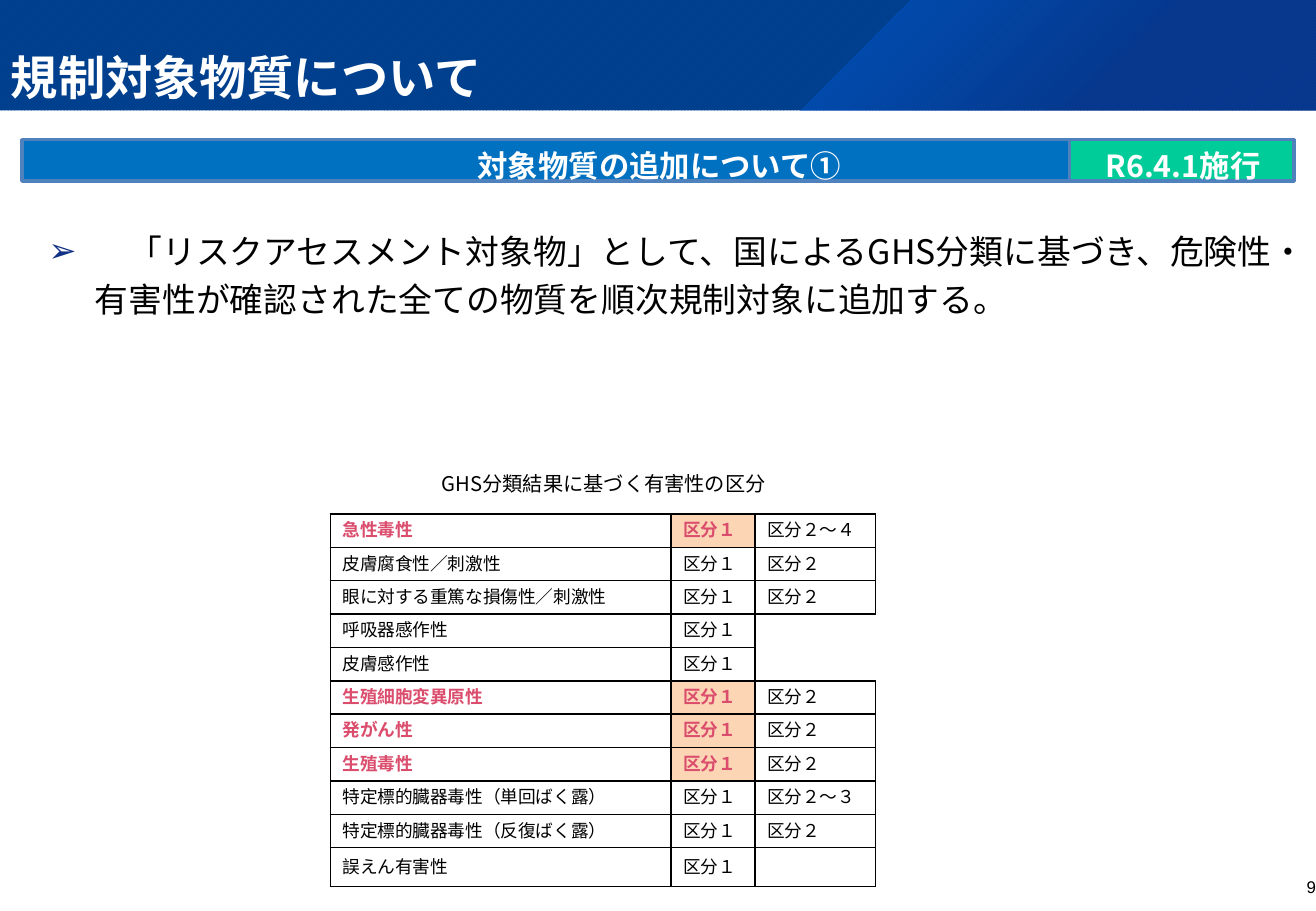
from pptx import Presentation
from pptx.dml.color import RGBColor
from pptx.enum.dml import MSO_PATTERN
from pptx.enum.shapes import MSO_SHAPE
from pptx.enum.text import MSO_ANCHOR, PP_ALIGN
from pptx.oxml import parse_xml
from pptx.oxml.ns import nsdecls, qn
from pptx.util import Pt
from lxml.etree import SubElement

GOTHIC = "Noto Sans CJK JP"
BLACK, WHITE, ROSE, PEACH = "000000", "FFFFFF", "DB4D6D", "FCD5B5"
HAZARDS = [
    ("急性毒性", "区分２～４", True),
    ("皮膚腐食性／刺激性", "区分２", False),
    ("眼に対する重篤な損傷性／刺激性", "区分２", False),
    ("呼吸器感作性", "", False),
    ("皮膚感作性", "", False),
    ("生殖細胞変異原性", "区分２", True),
    ("発がん性", "区分２", True),
    ("生殖毒性", "区分２", True),
    ("特定標的臓器毒性（単回ばく露）", "区分２～３", False),
    ("特定標的臓器毒性（反復ばく露）", "区分２", False),
    ("誤えん有害性", "", False),
]
OPEN_EDGES = {3: "LT", 4: "LB"}


def color(value):
    return RGBColor.from_string(value)


def add_run(p, text, size, rgb, bold=False, font=GOTHIC):
    r = p.add_run()
    r.text = text
    r.font.size = Pt(size)
    r.font.bold = bold
    r.font.name = font
    r.font.color.rgb = color(rgb)
    SubElement(r._r.get_or_add_rPr(), qn("a:ea")).set("typeface", font)


def set_frame(tf, anchor, insets):
    tf.word_wrap = True
    tf.vertical_anchor = anchor
    tf.margin_left, tf.margin_top, tf.margin_right, tf.margin_bottom = map(Pt, insets)


def add_text(s, box, text, size, rgb, align=PP_ALIGN.LEFT, anchor=MSO_ANCHOR.TOP,
             insets=(7.2, 3.6, 7.2, 3.6), bold=False, font=GOTHIC):
    tf = s.shapes.add_textbox(*map(Pt, box)).text_frame
    set_frame(tf, anchor, insets)
    p = tf.paragraphs[0]
    p.alignment = align
    add_run(p, text, size, rgb, bold, font)
    return p


def add_header(s):
    sp = s.shapes.add_shape(MSO_SHAPE.RECTANGLE, 0, 0, Pt(780), Pt(65.5))
    sp.shadow.inherit = False
    sp.fill.patterned()
    sp.fill.pattern = MSO_PATTERN.DARK_UPWARD_DIAGONAL
    sp.fill.fore_color.rgb = color("003579")
    sp.fill.back_color.rgb = color("004292")
    sp.line.fill.background()

    builder = s.shapes.build_freeform(Pt(539.3), Pt(0.5))
    corners = [(780, 0), (780, 65.5), (473.8, 65.5)]
    builder.add_line_segments([(Pt(x), Pt(y)) for x, y in corners])
    sp = builder.convert_to_shape()
    sp.shadow.inherit = False
    sp.line.fill.background()
    sp.fill.background()
    old = sp._element.spPr.find(qn("a:noFill"))
    stops = "".join(
        f'<a:gs pos="{pos}000"><a:srgbClr val="{rgb}"><a:alpha val="{alpha}000"/></a:srgbClr></a:gs>'
        for pos, rgb, alpha in [(0, "0064DF", 50), (62, "0C338E", 55)])
    old.getparent().replace(old, parse_xml(
        f'<a:gradFill {nsdecls("a")}><a:gsLst>{stops}</a:gsLst><a:path path="circle">'
        '<a:fillToRect r="100000" b="100000"/></a:path></a:gradFill>'))
    add_text(s, (0, 0, 780, 65.5), "規制対象物質について", 28, WHITE,
             anchor=MSO_ANCHOR.BOTTOM, insets=(6.5, 3.6, 6.5, 3.6), bold=True)


def add_band(s, left, width, text, fill):
    sp = s.shapes.add_shape(MSO_SHAPE.RECTANGLE, Pt(left), Pt(82.8), Pt(width), Pt(24.6))
    sp.shadow.inherit = False
    sp.fill.solid()
    sp.fill.fore_color.rgb = color(fill)
    sp.line.color.rgb = color("4F81BD")
    sp.line.width = Pt(2)
    set_frame(sp.text_frame, MSO_ANCHOR.MIDDLE, (8.6, 5.8, 7.2, 0))
    p = sp.text_frame.paragraphs[0]
    p.alignment = PP_ALIGN.CENTER
    add_run(p, text, 18, WHITE, True)


def add_bullet(p):
    pPr = p._p.get_or_add_pPr()
    pPr.set("marL", str(Pt(27.4)))
    pPr.set("indent", str(-Pt(27.4)))
    p.line_spacing = 1.2
    p.space_after = Pt(7)
    bu_clr = SubElement(pPr, qn("a:buClr"))
    SubElement(bu_clr, qn("a:srgbClr")).set("val", "103185")
    SubElement(pPr, qn("a:buFont")).set("typeface", "Arial")
    SubElement(pPr, qn("a:buChar")).set("char", "➢")


def set_borders(cell, edges):
    tcPr = cell._tc.get_or_add_tcPr()
    for edge in "LRTB":
        ln = SubElement(tcPr, qn(f"a:ln{edge}"), w=str(Pt(1)))
        if edge in edges:
            fill = SubElement(ln, qn("a:solidFill"))
            SubElement(fill, qn("a:srgbClr")).set("val", BLACK)
        else:
            SubElement(ln, qn("a:noFill"))


def fill_cell(cell, text, rgb, bold, fill, edges):
    cell.vertical_anchor = MSO_ANCHOR.MIDDLE
    cell.margin_top = cell.margin_bottom = 0
    set_borders(cell, edges)
    if fill:
        cell.fill.solid()
        cell.fill.fore_color.rgb = color(fill)
    else:
        cell.fill.background()
    p = cell.text_frame.paragraphs[0]
    if text:
        add_run(p, text, 10.5, rgb, bold, "Calibri")
    else:
        SubElement(p._p, qn("a:endParaRPr")).set("sz", "1050")


def add_hazard_table(s):
    frame = s.shapes.add_table(len(HAZARDS), 3, Pt(195.8), Pt(304.6), Pt(323.3), Pt(221))
    table = frame.table
    table.first_row = table.horz_banding = False
    for col, width in zip(table.columns, (201.9, 49.9, 71.5)):
        col.width = Pt(width)
    for i, (hazard, lower, key) in enumerate(HAZARDS):
        table.rows[i].height = Pt(23 if i == len(HAZARDS) - 1 else 19.8)
        rgb = ROSE if key else BLACK
        fill_cell(table.cell(i, 0), hazard, rgb, key, None, "LRTB")
        fill_cell(table.cell(i, 1), "区分１", rgb, key, PEACH if key else None, "LRTB")
        fill_cell(table.cell(i, 2), lower, BLACK, False, None, OPEN_EDGES.get(i, "LRTB"))


def main():
    prs = Presentation()
    prs.slide_width, prs.slide_height = Pt(780), Pt(540)
    s = prs.slides.add_slide(prs.slide_layouts[6])
    add_header(s)
    add_text(s, (598, 511.2, 182, 28.8), "9", 10, BLACK, PP_ALIGN.RIGHT,
             MSO_ANCHOR.MIDDLE, (0, 0, 0, 0), font="Arial")
    add_band(s, 13, 754, "対象物質の追加について①", "0070C0")
    p = add_text(s, (21.6, 128.2, 766.8, 65.5),
                 "　「リスクアセスメント対象物」として、国によるGHS分類に基づき、"
                 "危険性・有害性が確認された全ての物質を順次規制対象に追加する。", 20, BLACK)
    add_bullet(p)
    add_band(s, 633.8, 133.2, "R6.4.1施行", "00CC99")
    add_hazard_table(s)
    add_text(s, (81.4, 275.8, 553, 21.6), "GHS分類結果に基づく有害性の区分", 12, BLACK,
             PP_ALIGN.CENTER)
    prs.save("out.pptx")


if __name__ == "__main__":
    main()
